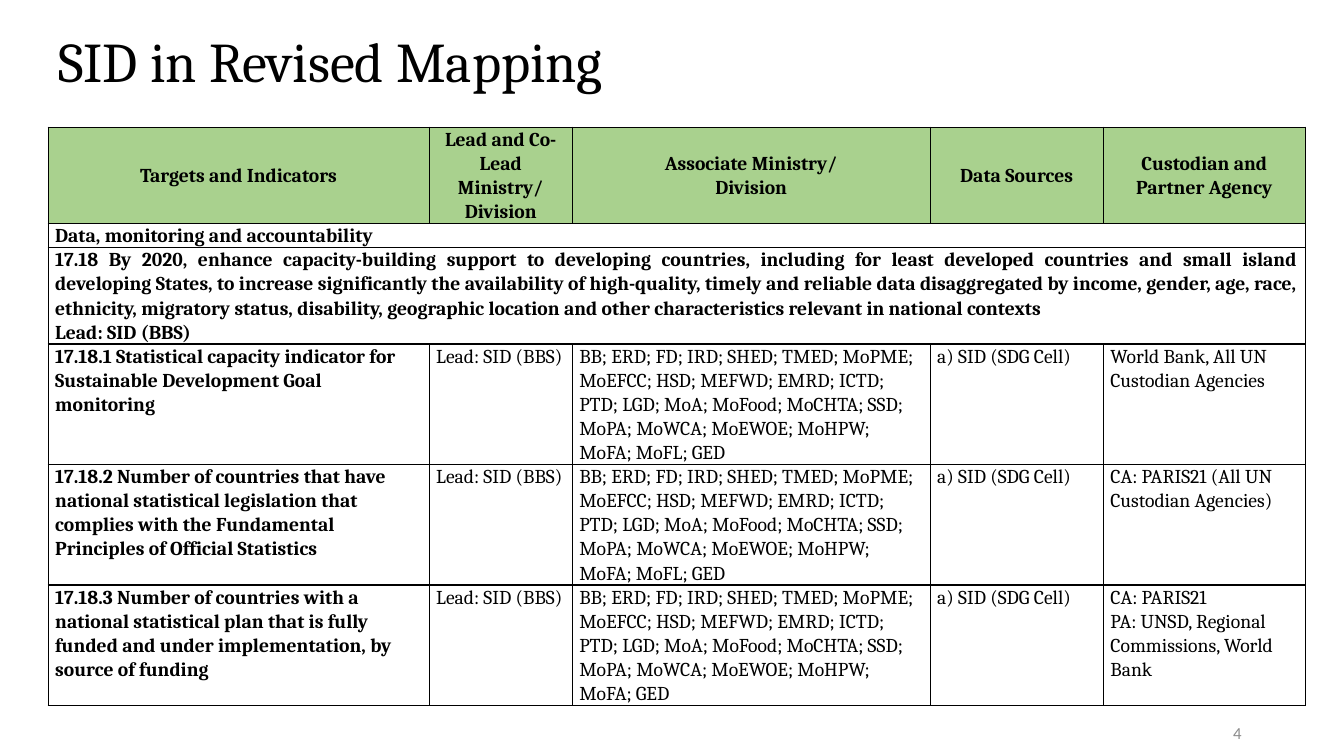
"""Build the slide that maps the SID indicators to ministries and agencies."""
from dataclasses import dataclass

from lxml.etree import SubElement as Sub
from pptx import Presentation
from pptx.dml.color import RGBColor as Rgb
from pptx.enum.text import MSO_ANCHOR as Anchor, MSO_AUTO_SIZE as Auto, PP_ALIGN as Align
from pptx.oxml.ns import qn
from pptx.util import Pt

TITLE = "SID in Revised Mapping"
PAGE = "4"
HEAD = [
    "Targets and Indicators",
    "Lead and Co-Lead Ministry/\nDivision",
    "Associate Ministry/\nDivision",
    "Data Sources",
    "Custodian and Partner Agency",
]
GOAL = "Data, monitoring and accountability"
TARGET = (
    "17.18 By 2020, enhance capacity-building support to developing countries, "
    "including for least developed countries and small island developing States, "
    "to increase significantly the availability of high-quality, timely and reliable "
    "data disaggregated by income, gender, age, race, ethnicity, migratory status, "
    "disability, geographic location and other characteristics relevant in national "
    "contexts\nLead: SID (BBS)"
)
LEAD = "Lead: SID (BBS)"
SOURCE = "a) SID (SDG Cell)"
BODIES = (
    "BB; ERD; FD; IRD; SHED; TMED; MoPME; MoEFCC; HSD; MEFWD; EMRD; ICTD; PTD; LGD; "
    "MoA; MoFood; MoCHTA; SSD; MoPA; MoWCA; MoEWOE; MoHPW; MoFA; "
)
ITEMS = [
    ("17.18.1 Statistical capacity indicator for Sustainable Development Goal monitoring",
     "MoFL; GED", "World Bank, All UN Custodian Agencies"),
    ("17.18.2 Number of countries that have national statistical legislation that "
     "complies with the Fundamental Principles of Official Statistics",
     "MoFL; GED", "CA: PARIS21 (All UN Custodian Agencies)"),
    ("17.18.3 Number of countries with a national statistical plan that is fully "
     "funded and under implementation, by source of funding",
     "GED", "CA: PARIS21\nPA: UNSD, Regional Commissions, World Bank"),
]
ROWS = [HEAD, [GOAL], [TARGET]] + [
    [name, LEAD, BODIES + last, SOURCE, agent] for name, last, agent in ITEMS
]
LINES = [4, 1, 4, 5, 5, 5]
WIDTHS = [272.2, 102.2, 255.6, 123.8, 144.2]
LEFT, TOP, PITCH = 34.4, 90.8, 17.2


@dataclass(frozen=True)
class Theme:
    """Hold the colours, fonts and type sizes."""
    ink: str = "000000"
    gray: str = "8C8C8C"
    green: str = "A9D18E"
    serif: str = "Cambria"
    sans: str = "Calibri"
    large: int = 40
    body: int = 14
    small: int = 12


LOOK = Theme()


def style(para, face, size, tint, bold=False, align=Align.LEFT, pitch=None):
    """Format one paragraph."""
    font = para.font
    font.name, font.size, font.bold = face, Pt(size), bold
    font.color.rgb = Rgb.from_string(tint)
    para.alignment = align
    if pitch:
        para.line_spacing = pitch


def border(cell):
    """Draw a thin line on each side of a cell."""
    props = cell._tc.get_or_add_tcPr()
    for side in "LRTB":
        line = Sub(props, qn("a:ln" + side), w=str(Pt(1)))
        Sub(Sub(line, qn("a:solidFill")), qn("a:srgbClr"), val=LOOK.ink)


def write(cell, text, bold, align):
    """Fill a cell with text."""
    cell.text = text
    for para in cell.text_frame.paragraphs:
        style(para, LOOK.serif, LOOK.body, LOOK.ink, bold, align, 1.07)


def add_grid(slide):
    """Add the mapping table."""
    heights = [PITCH * n for n in LINES]
    grid = slide.shapes.add_table(
        len(ROWS), len(WIDTHS), Pt(LEFT), Pt(TOP), Pt(sum(WIDTHS)), Pt(sum(heights))
    ).table
    for col, width in zip(grid.columns, WIDTHS):
        col.width = Pt(width)
    for r, texts in enumerate(ROWS):
        grid.rows[r].height = Pt(heights[r])
        wide = len(texts) == 1
        for c in range(len(WIDTHS)):
            cell = grid.cell(r, c)
            cell.margin_left = cell.margin_right = Pt(5)
            cell.margin_top = cell.margin_bottom = 0
            border(cell)
            if r == 0:
                cell.fill.solid()
                cell.fill.fore_color.rgb = Rgb.from_string(LOOK.green)
                cell.vertical_anchor = Anchor.MIDDLE
            else:
                cell.fill.background()
            align = Align.CENTER if r == 0 else Align.LEFT
            if texts[0] == TARGET:
                align = Align.JUSTIFY
            text = texts[c] if c < len(texts) else ""
            write(cell, text, r == 0 or c == 0, align)
        if wide:
            grid.cell(r, 0).merge(grid.cell(r, len(WIDTHS) - 1))


def main():
    """Build and save the slide."""
    deck = Presentation()
    deck.slide_width, deck.slide_height = Pt(960), Pt(540)
    slide = deck.slides.add_slide(deck.slide_layouts[5])

    title = slide.shapes.title
    title.left, title.top, title.width, title.height = map(Pt, (LEFT, 26, 632, 40))
    title.text = TITLE
    frame = title.text_frame
    frame.auto_size, frame.vertical_anchor = Auto.NONE, Anchor.MIDDLE
    style(frame.paragraphs[0], LOOK.serif, LOOK.large, LOOK.ink, pitch=0.9)

    add_grid(slide)

    frame = slide.shapes.add_textbox(Pt(678), Pt(509), Pt(216), Pt(29)).text_frame
    frame.word_wrap, frame.vertical_anchor = True, Anchor.MIDDLE
    frame.text = PAGE
    style(frame.paragraphs[0], LOOK.sans, LOOK.small, LOOK.gray, align=Align.RIGHT)
    deck.save("out.pptx")


if __name__ == "__main__":
    main()
